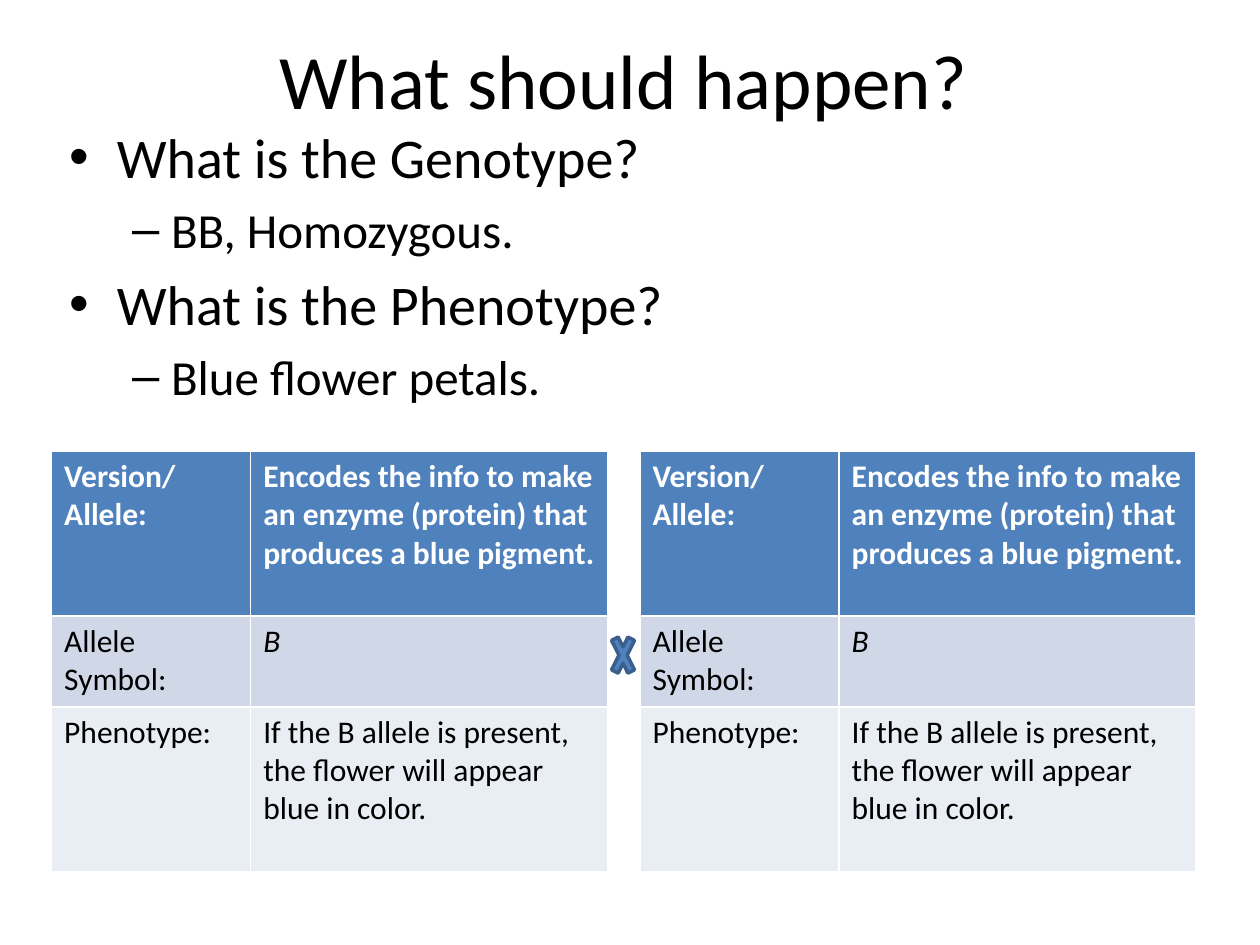
import pptx
import pptx.util
import pptx.dml.color
import pptx.enum.shapes
import pptx.enum.text
import lxml.etree

Inches, Pt = pptx.util.Inches, pptx.util.Pt
FONT = "Calibri"
BLUE, BLACK, WHITE = "4F81BD", "000000", "FFFFFF"

QUESTIONS = [
    (0, "What is the Genotype?"),
    (1, "BB, Homozygous."),
    (0, "What is the Phenotype?"),
    (1, "Blue flower petals."),
]
# Bullet, text size, left indent and hanging indent for each level
LEVELS = [("•", 32, 0.38, 0.38), ("–", 28, 0.81, 0.31)]

ALLELE_ROWS = [
    ("Version/\nAllele:",
     "Encodes the info to make an enzyme (protein) that produces a blue pigment."),
    ("Allele Symbol:", "B"),
    ("Phenotype:",
     "If the B allele is present, the flower will appear blue in color."),
]
ROW_FILLS = [BLUE, "D0D8E8", "E9EDF4"]
ROW_HEIGHTS = [1.31, 0.72, 1.31]
COL_WIDTHS = [1.58, 2.83]


def color(value):
    return pptx.dml.color.RGBColor.from_string(value)


def format_runs(p, size, text_color=BLACK, bold=False, italic=False):
    for r in p.runs:
        r.font.name = FONT
        r.font.size = Pt(size)
        r.font.color.rgb = color(text_color)
        r.font.bold = bold
        r.font.italic = italic


def add_title(s, text):
    title = s.shapes.title
    title.left, title.top = Inches(0.45), Inches(0)
    title.width, title.height = Inches(9), Inches(1.25)
    tf = title.text_frame
    tf.text = text
    tf.vertical_anchor = pptx.enum.text.MSO_ANCHOR.MIDDLE
    tf.paragraphs[0].alignment = pptx.enum.text.PP_ALIGN.CENTER
    format_runs(tf.paragraphs[0], 44)


def add_bullets(s, items):
    box = s.shapes.add_textbox(Inches(0.45), Inches(0.92), Inches(9), Inches(4.95))
    tf = box.text_frame
    tf.word_wrap = True
    tf.text = "\n".join(text for level, text in items)
    for p, (level, text) in zip(tf.paragraphs, items):
        bullet, size, left, hanging = LEVELS[level]
        p.level = level
        p.space_before = Pt(size * 0.2)
        format_runs(p, size)
        pPr = p._p.get_or_add_pPr()
        pPr.set("marL", str(Inches(left)))
        pPr.set("indent", str(-Inches(hanging)))
        ns = pptx.oxml.ns.qn
        lxml.etree.SubElement(pPr, ns("a:buFont")).set("typeface", "Arial")
        lxml.etree.SubElement(pPr, ns("a:buChar")).set("char", bullet)


def add_allele_table(s, left):
    # The default table style supplies the white cell borders
    table = s.shapes.add_table(
        len(ALLELE_ROWS), len(COL_WIDTHS), Inches(left), Inches(3.58),
        Inches(sum(COL_WIDTHS)), Inches(sum(ROW_HEIGHTS))).table
    for column, width in zip(table.columns, COL_WIDTHS):
        column.width = Inches(width)
    for i, texts in enumerate(ALLELE_ROWS):
        table.rows[i].height = Inches(ROW_HEIGHTS[i])
        header = i == 0
        for j, text in enumerate(texts):
            cell = table.cell(i, j)
            cell.fill.solid()
            cell.fill.fore_color.rgb = color(ROW_FILLS[i])
            cell.text_frame.text = text
            for p in cell.text_frame.paragraphs:
                format_runs(p, 18, WHITE if header else BLACK,
                            bold=header, italic=text == "B")


def add_cross(s):
    sp = s.shapes.add_shape(pptx.enum.shapes.MSO_SHAPE.MATH_MULTIPLY,
                            Inches(4.82), Inches(4.95), Inches(0.25), Inches(0.5))
    sp.shadow.inherit = False
    sp.fill.solid()
    sp.fill.fore_color.rgb = color(BLUE)
    sp.line.color.rgb = color("3A5F8C")
    sp.line.width = Pt(2)


def main():
    prs = pptx.Presentation()
    prs.slide_width, prs.slide_height = Inches(10), Inches(7.5)
    s = prs.slides.add_slide(prs.slide_layouts[5])

    # Questions and answers
    add_title(s, "What should happen?")
    add_bullets(s, QUESTIONS)

    # The two parent alleles, crossed
    for left in (0.41, 5.08):
        add_allele_table(s, left)
    add_cross(s)

    prs.save("out.pptx")


if __name__ == "__main__":
    main()
